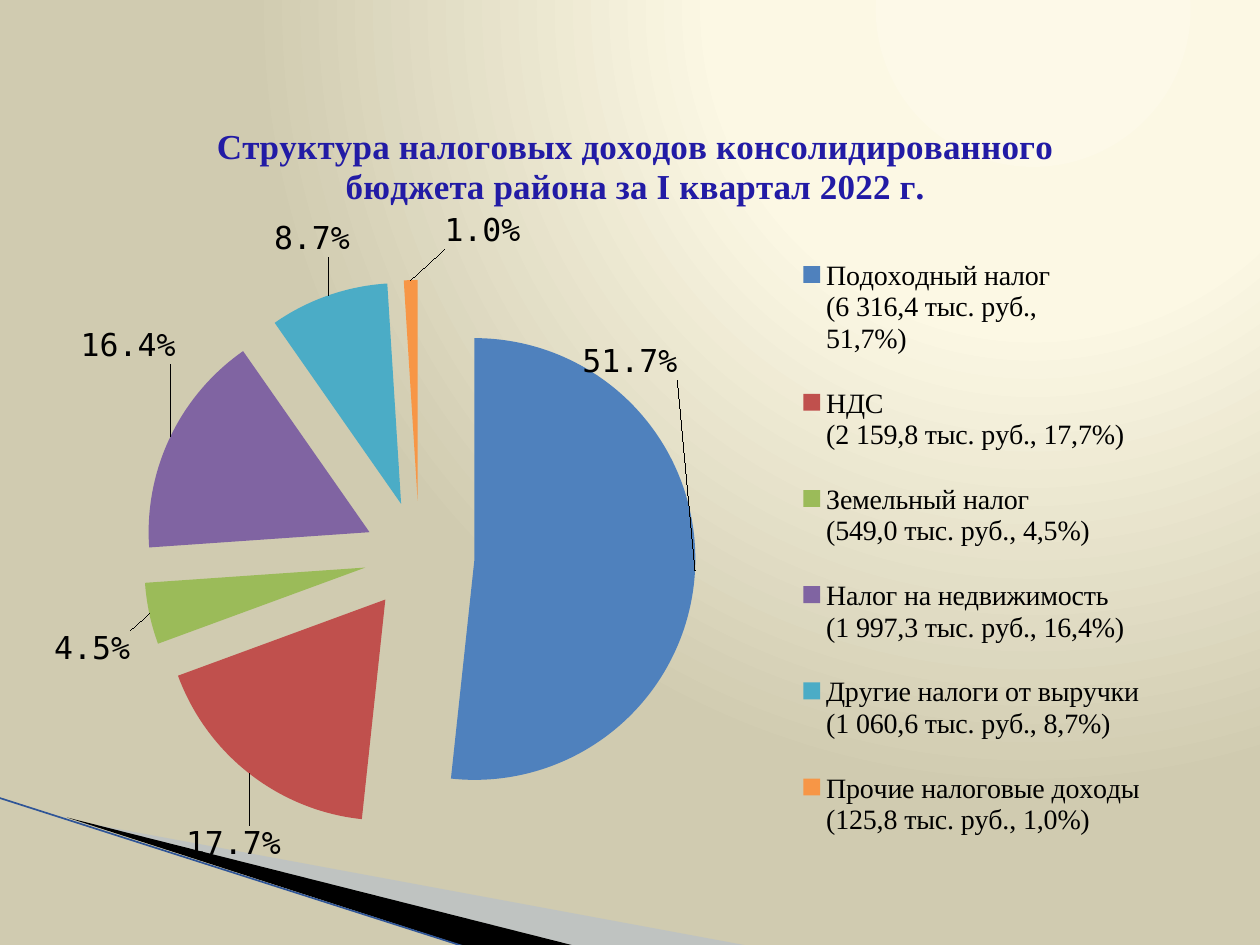
from dataclasses import dataclass

from lxml import etree
from pptx import Presentation
from pptx.chart.data import CategoryChartData
from pptx.dml.color import RGBColor
from pptx.enum.chart import XL_CHART_TYPE, XL_LABEL_POSITION, XL_LEGEND_POSITION
from pptx.enum.shapes import MSO_CONNECTOR
from pptx.oxml import parse_xml
from pptx.oxml.ns import qn
from pptx.util import Cm, Pt

PIE = XL_CHART_TYPE.PIE
BEST = XL_LABEL_POSITION.BEST_FIT
RIGHT = XL_LEGEND_POSITION.RIGHT
STRAIGHT = MSO_CONNECTOR.STRAIGHT
NS = "http://schemas.openxmlformats.org/drawingml/2006/main"


@dataclass(frozen=True)
class Theme:
    glow: tuple = ((0, "FDF9E8"), (40, "FCF8E4"), (100, "D0CBB0"))
    mist: str = "A7B9DB"
    dark: str = "000000"
    edge: str = "2F5597"
    title: str = "221BA5"
    serif: str = "Times New Roman"
    mono: str = "DejaVu Sans Mono"
    head: int = 20
    label: int = 18
    key: int = 16


THEME = Theme()
TITLE = ("Структура налоговых доходов консолидированного "
         "бюджета района за I квартал 2022 г.")
# Legend text, share, slice colour, label shift as a part of the chart size
TAXES = [
    ("Подоходный налог\n(6 316,4 тыс. руб.,\n51,7%)", 0.517, "4F81BD", (-0.1, -0.27)),
    ("НДС\n(2 159,8 тыс. руб., 17,7%)", 0.177, "C0504D", (0.03, 0.06)),
    ("Земельный налог\n(549,0 тыс. руб., 4,5%)", 0.045, "9BBB59", (-0.01, 0.02)),
    ("Налог на недвижимость\n(1 997,3 тыс. руб., 16,4%)", 0.164, "8064A2", (0.01, -0.09)),
    ("Другие налоги от выручки\n(1 060,6 тыс. руб., 8,7%)", 0.087, "4BACC6", (0.02, -0.04)),
    ("Прочие налоговые доходы\n(125,8 тыс. руб., 1,0%)", 0.01, "F79646", (0.06, -0.03)),
]


def style(font, name, size, color, bold=False):
    look = {"name": name, "size": Pt(size), "bold": bold}
    for key, value in look.items():
        setattr(font, key, value)
    font.color.rgb = RGBColor.from_string(color)


def paint(fill, color):
    fill.solid()
    fill.fore_color.rgb = RGBColor.from_string(color)


def backdrop(slide):
    """Radial glow from the top right."""
    slide.background.fill.solid()
    stops = "".join(
        f'<a:gs pos="{pos * 1000}"><a:srgbClr val="{color}"/></a:gs>'
        for pos, color in THEME.glow)
    grad = parse_xml(
        f'<a:gradFill xmlns:a="{NS}" rotWithShape="1"><a:gsLst>{stops}</a:gsLst>'
        '<a:path path="circle"><a:fillToRect l="65000" t="0" r="0" b="98000"/>'
        '</a:path></a:gradFill>')
    solid = next(slide.background._cSld.iter(qn("a:solidFill")))
    solid.getparent().replace(solid, grad)


def wedge(slide, points, color, alpha=None):
    start, *rest = [(Cm(x), Cm(y)) for x, y in points]
    pen = slide.shapes.build_freeform(*start)
    pen.add_line_segments(rest, close=True)
    shape = pen.convert_to_shape()
    shape.shadow.inherit = False
    paint(shape.fill, color)
    shape.line.fill.background()
    if alpha:
        tint = next(shape._element.spPr.iter(qn("a:srgbClr")))
        etree.SubElement(tint, qn("a:alpha"), val=str(alpha * 1000))


def rule(slide, ends, color, width):
    line = slide.shapes.add_connector(STRAIGHT, *map(Cm, ends))
    line.line.color.rgb = RGBColor.from_string(color)
    line.line.width = Pt(width)
    etree.SubElement(line._element.spPr, qn("a:effectLst"))


def place(node, index, spot, mode="edge", inner=False):
    """Give a chart part a manual layout, as parts of the chart size."""
    for old in node.findall(qn("c:layout")):
        node.remove(old)
    layout = etree.Element(qn("c:layout"))
    box = etree.SubElement(layout, qn("c:manualLayout"))
    if inner:
        etree.SubElement(box, qn("c:layoutTarget"), val="inner")
    if mode:
        for tag in ("xMode", "yMode"):
            etree.SubElement(box, qn(f"c:{tag}"), val=mode)
    for tag, value in zip("xywh", spot):
        etree.SubElement(box, qn(f"c:{tag}"), val=str(value))
    node.insert(index, layout)


def mark(series):
    """Colour and pull out the slices, and set their labels."""
    labels = series.data_labels
    labels.show_value = True
    labels.number_format = "0.0%"
    labels.number_format_is_linked = False
    labels.position = BEST
    style(labels.font, THEME.mono, THEME.label, THEME.dark)
    for i, (_, _, color, shift) in enumerate(TAXES):
        point = series.points[i]
        paint(point.format.fill, color)
        label = point.data_label
        style(label.font, THEME.mono, THEME.label, THEME.dark)
        label.position = BEST
        node = next(n for n in series._element.iter(qn("c:dLbl"))
                    if n.find(qn("c:idx")).get("val") == str(i))
        place(node, 1, shift, mode=None)
    burst = etree.Element(qn("c:explosion"), val="25")
    series._element.find(qn("c:dPt")).addprevious(burst)


def pie(slide):
    data = CategoryChartData(number_format="0.0%")
    data.categories = [tax[0] for tax in TAXES]
    data.add_series("Series 1", [tax[1] for tax in TAXES])
    frame = slide.shapes.add_chart(
        PIE, Cm(0.71), Cm(1.93), Cm(24.2), Cm(15.6), data)
    chart = frame.chart
    style(chart.font, THEME.mono, THEME.label, THEME.dark)

    chart.has_title = True
    text = chart.chart_title.text_frame
    text.text = TITLE
    style(text.paragraphs[0].runs[0].font, THEME.serif, THEME.head, THEME.title, True)

    chart.has_legend = True
    legend = chart.legend
    legend.position = RIGHT
    legend.include_in_layout = False
    style(legend.font, THEME.serif, THEME.key, THEME.dark)
    place(legend._element, 1, (0.615, 0.17, 0.33, 0.83))

    plot = chart.plots[0]
    plot.vary_by_categories = True
    place(plot._element.getparent(), 0, (0.09, 0.23, 0.46, 0.73), inner=True)
    mark(plot.series[0])


def main():
    deck = Presentation()
    deck.slide_width, deck.slide_height = Cm(25.4), Cm(19.05)
    slide = deck.slides.add_slide(deck.slide_layouts[6])
    backdrop(slide)
    wedge(slide, [(1.4, 16.53), (15.11, 19.07), (11.58, 19.07)], THEME.mist, 40)
    wedge(slide, [(1.35, 16.48), (11.6, 19.07), (9.45, 19.1)], THEME.dark)
    rule(slide, (-0.03, 16.08, 9.42, 19.1), THEME.edge, 0.95)
    pie(slide)
    deck.save("out.pptx")


if __name__ == "__main__":
    main()
